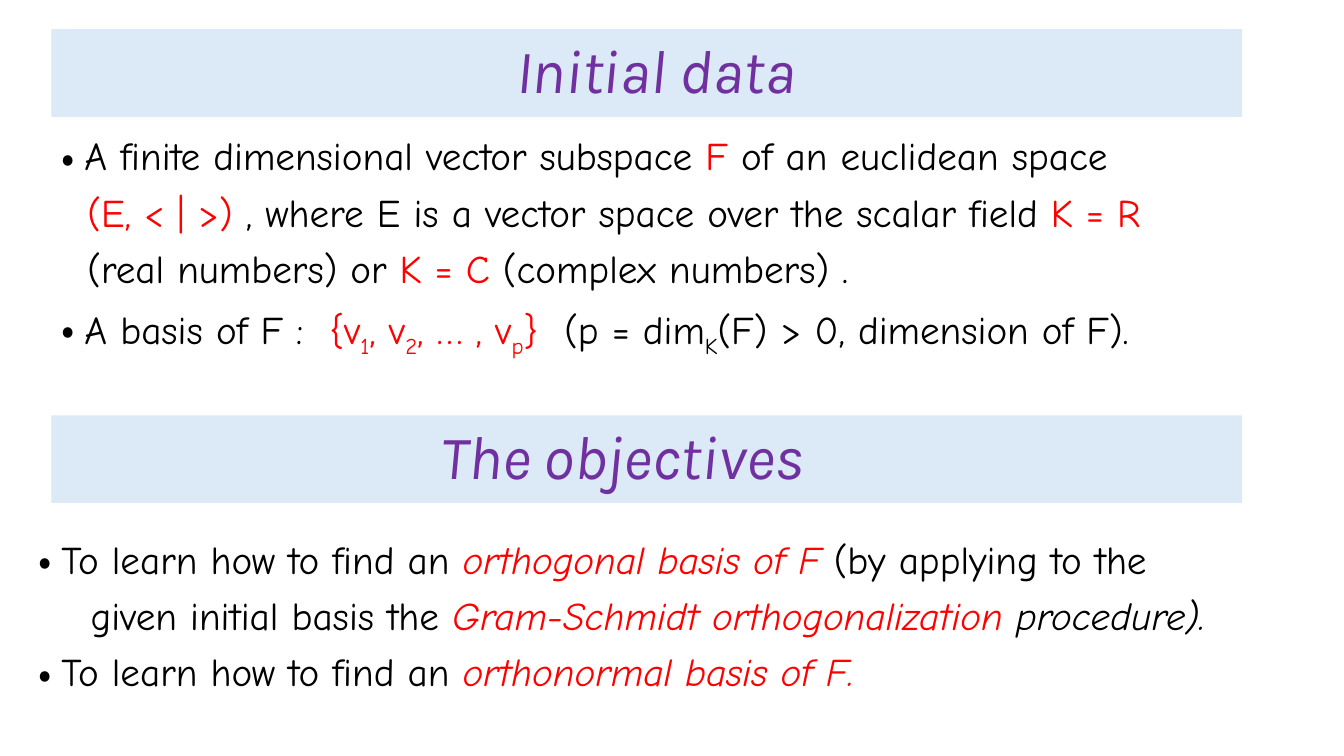
from lxml.etree import SubElement
from pptx import Presentation
from pptx.dml.color import RGBColor
from pptx.enum.shapes import MSO_SHAPE
from pptx.enum.text import MSO_ANCHOR, PP_ALIGN
from pptx.oxml.ns import qn
from pptx.util import Inches, Pt

BLACK, RED, PURPLE, PALE_BLUE = "000000", "FF0000", "7030A0", "DCEAF7"
PLAIN, KEY, SLANTED_KEY, SLANTED, SUB, KEY_SUB = (
    (BLACK, False, False), (RED, False, False), (RED, True, False),
    (BLACK, True, False), (BLACK, False, True), (RED, False, True),
)
BULLET_INDENT = 0.23
HEADINGS = [
    ("Initial data", 0.29, 0.09),
    ("The objectives", 4.12, -0.24),
]
BODIES = [
    ((0.51, 1.31, 12.4, 2.48), 0.26, [
        (True, [("A finite dimensional vector subspace ", PLAIN), ("F", KEY),
                (" of an euclidean space", PLAIN)]),
        (False, [("(E, < | >) ", KEY),
                 (", where E is a vector space over the scalar field ", PLAIN),
                 ("K = R", KEY)]),
        (False, [("(real numbers) or ", PLAIN), ("K = C", KEY),
                 (" (complex numbers) .", PLAIN)]),
        (True, [("A basis of F :", PLAIN), ("  {v", KEY), ("1", KEY_SUB),
                (", v", KEY), ("2", KEY_SUB), (", … , v", KEY), ("p", KEY_SUB),
                ("}  ", KEY), ("(p = dim", PLAIN), ("K", SUB),
                ("(F) > 0, dimension of F).", PLAIN)]),
    ]),
    ((0.28, 5.31, 12.93, 2), 0.52, [
        (True, [("To learn how to find an ", PLAIN),
                ("orthogonal basis of F ", SLANTED_KEY),
                ("(by applying to the", PLAIN)]),
        (False, [("given initial basis the ", PLAIN),
                 ("Gram-Schmidt orthogonalization ", SLANTED_KEY),
                 ("procedure).", SLANTED)]),
        (True, [("To learn how to find an ", PLAIN),
                ("orthonormal basis of F.", SLANTED_KEY)]),
    ]),
]


def color(value):
    return RGBColor.from_string(value)


def add_span(para, text, font, size, fill, italic, subscript=False):
    span = para.add_run()
    span.text = text
    span.font.name = font
    span.font.size = Pt(size)
    span.font.color.rgb = color(fill)
    span.font.italic = italic
    if subscript:
        span.font._element.set("baseline", "-25000")


def indent(para, left, bulleted):
    properties = para._p.get_or_add_pPr()
    properties.set("marL", str(Inches(left)))
    properties.set("indent", str(-Inches(left) if bulleted else 0))
    if bulleted:
        SubElement(properties, qn("a:buFont")).set("typeface", "Noto Sans CJK JP")
        SubElement(properties, qn("a:buChar")).set("char", "•")
    else:
        SubElement(properties, qn("a:buNone"))


def add_heading(page, text, top, shift):
    box = page.shapes.add_shape(MSO_SHAPE.RECTANGLE, Inches(0.51), Inches(top),
                                Inches(11.81), Inches(0.87))
    box.shadow.inherit = False
    box.fill.solid()
    box.fill.fore_color.rgb = color(PALE_BLUE)
    box.line.fill.background()
    frame = box.text_frame
    frame.vertical_anchor = MSO_ANCHOR.MIDDLE
    frame.margin_left = Inches(0.1 + 2 * max(shift, 0))
    frame.margin_right = Inches(0.1 + 2 * max(-shift, 0))
    para = frame.paragraphs[0]
    para.alignment = PP_ALIGN.CENTER
    para.line_spacing = 0.9
    add_span(para, text, "Karla", 44, PURPLE, True)


def add_body(page, place, continuation_indent, lines):
    box = page.shapes.add_textbox(*map(Inches, place))
    frame = box.text_frame
    frame.word_wrap = True
    for number, (bulleted, spans) in enumerate(lines):
        para = frame.add_paragraph() if number else frame.paragraphs[0]
        para.line_spacing = 0.9
        para.space_before = Pt(10)
        indent(para, BULLET_INDENT if bulleted else continuation_indent, bulleted)
        for text, (fill, italic, subscript) in spans:
            add_span(para, text, "Comic Neue", 28, fill, italic, subscript)


def main():
    deck = Presentation()
    deck.slide_width, deck.slide_height = Inches(13.33), Inches(7.5)
    page = deck.slides.add_slide(deck.slide_layouts[6])
    for heading, body in zip(HEADINGS, BODIES):
        add_heading(page, *heading)
        add_body(page, *body)
    deck.save("out.pptx")


if __name__ == "__main__":
    main()
